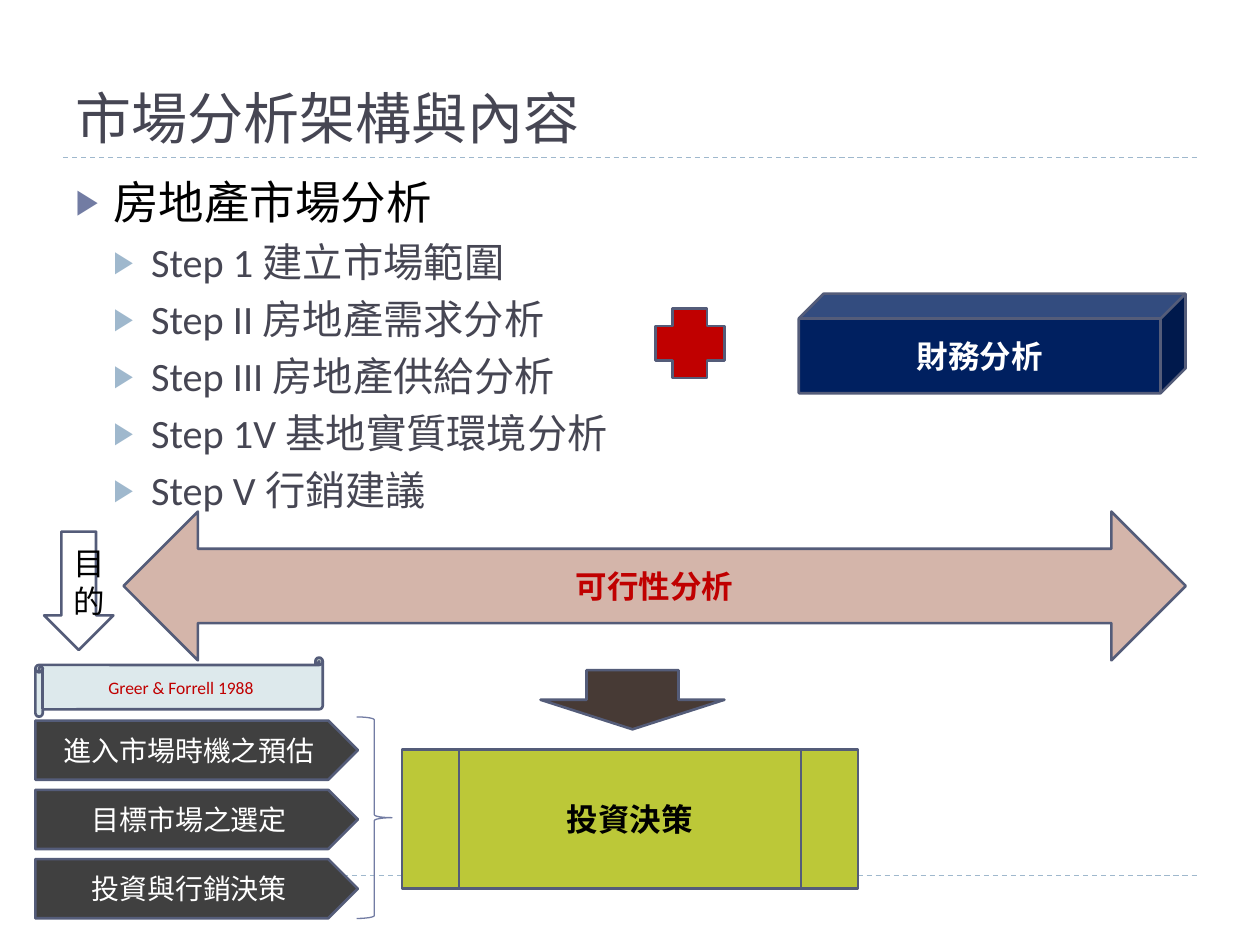
from lxml import etree
from pptx import Presentation
from pptx.dml.color import RGBColor
from pptx.enum import dml, shapes, text
from pptx.oxml import ns
from pptx.util import Pt


def hue(code):
    return RGBColor.from_string(code)


def style(par, size, code, bold=False, face="Calibri"):
    # Run fonts too, since some viewers ignore paragraph defaults
    for font in [par.font] + [run.font for run in par.runs]:
        font.name, font.size, font.bold = face, Pt(size), bold
        font.color.rgb = hue(code)


prs = Presentation()
prs.slide_width, prs.slide_height = Pt(720), Pt(540)
slide = prs.slides.add_slide(prs.slide_layouts[1])
title, body = slide.placeholders

# Dashed rules
for y in (90, 500.4):
    rule = slide.shapes.add_connector(
        shapes.MSO_CONNECTOR.STRAIGHT, Pt(36), Pt(y), Pt(684), Pt(y))
    rule.line.color.rgb = hue("9FB8CD")
    rule.line.width = Pt(0.75)
    rule.line.dash_style = dml.MSO_LINE.DASH
    etree.SubElement(rule._element.spPr, ns.qn("a:effectLst"))

# Title
title.left, title.top, title.width, title.height = Pt(36), Pt(12), Pt(648), Pt(78)
frame = title.text_frame
frame.text = "市場分析架構與內容"
frame.auto_size = text.MSO_AUTO_SIZE.NONE
frame.vertical_anchor = text.MSO_ANCHOR.BOTTOM
frame.paragraphs[0].alignment = text.PP_ALIGN.LEFT
style(frame.paragraphs[0], 32, "464653", face="TeX Gyre Bonum")

# Steps of the market analysis
body.left, body.top, body.width, body.height = Pt(36), Pt(96), Pt(648), Pt(388.8)
frame = body.text_frame
frame.text = "\n".join([
    "房地產市場分析",
    "Step 1 建立市場範圍",
    "Step II 房地產需求分析",
    "Step III 房地產供給分析",
    "Step 1V 基地實質環境分析",
    "Step V 行銷建議",
])
frame.auto_size = text.MSO_AUTO_SIZE.NONE
levels = [(26, "000000", 6, "727CA3"), (23, "464653", 5, "9FB8CD")]
for i, par in enumerate(frame.paragraphs):
    par.level = min(i, 1)
    size, code, gap, mark = levels[par.level]
    par.space_before = Pt(gap)
    style(par, size, code)
    prop = par._p.get_or_add_pPr()
    prop.set("marL", str(Pt(21.6 * (par.level + 1))))
    prop.set("indent", str(-Pt(21.6)))
    bullet = etree.fromstring(
        f'<b xmlns:a="{ns.nsuri("a")}">'
        f'<a:buClr><a:srgbClr val="{mark}"/></a:buClr><a:buSzPct val="76000"/>'
        '<a:buFont typeface="Calibri"/><a:buChar char="▶"/></b>')
    spot = prop.index(prop.find(ns.qn("a:defRPr")))
    prop[spot:spot] = list(bullet)

# Shapes: kind, left, top, width, height, fill, text, size, colour, bold
kind = shapes.MSO_SHAPE
parts = [
    (kind.CROSS, 374.4, 176.4, 39.6, 39.6, "C00000", "", 18, "FFFFFF", False),
    (kind.CUBE, 456.5, 167.8, 221, 56.9, "002060", "財務分析", 18, "FFFFFF", True),
    (kind.LEFT_RIGHT_ARROW, 70.6, 292.3, 607, 85, "D4B5AA",
     "可行性分析", 18, "C00000", True),
    (kind.DOWN_ARROW, 308.9, 383, 105.1, 33.8, "473A35", "", 18, "FFFFFF", False),
    (kind.FLOWCHART_PREDEFINED_PROCESS, 229.7, 428.4, 260.6, 79.2, "BCC838",
     "投資決策", 18, "000000", True),
]
goals = ["進入市場時機之預估", "目標市場之選定", "投資與行銷決策"]
for i, goal in enumerate(goals):
    parts.append((kind.PENTAGON, 20.2, 411.8 + 39.6 * i, 184.3, 33.8, "404040",
                  goal, 16, "FFFFFF", False))
parts += [
    (kind.HORIZONTAL_SCROLL, 20.2, 375.8, 164.2, 33.8, "DDE9EC",
     "Greer & Forrell 1988", 10, "C00000", False),
    (kind.DOWN_ARROW, 25.2, 303.8, 39.6, 67.7, "FFFFFF", "目的", 18, "000000", False),
]
for form, x, y, w, h, fill, label, size, code, bold in parts:
    shape = slide.shapes.add_shape(form, Pt(x), Pt(y), Pt(w), Pt(h))
    shape.shadow.inherit = False
    shape.fill.solid()
    shape.fill.fore_color.rgb = hue(fill)
    shape.line.color.rgb = hue("545C79")
    shape.line.width = Pt(1.5)
    if label:
        frame = shape.text_frame
        frame.text = label
        frame.word_wrap = True
        frame.vertical_anchor = text.MSO_ANCHOR.MIDDLE
        frame.paragraphs[0].alignment = text.PP_ALIGN.CENTER
        style(frame.paragraphs[0], size, code, bold)

# Brace joining the goals to the decision
brace = slide.shapes.add_shape(
    kind.RIGHT_BRACE, Pt(203.8), Pt(409.7), Pt(20.2), Pt(115.2))
brace.shadow.inherit = False
brace.fill.background()
brace.line.color.rgb = hue("727CA3")
brace.line.width = Pt(0.75)

prs.save("out.pptx")
